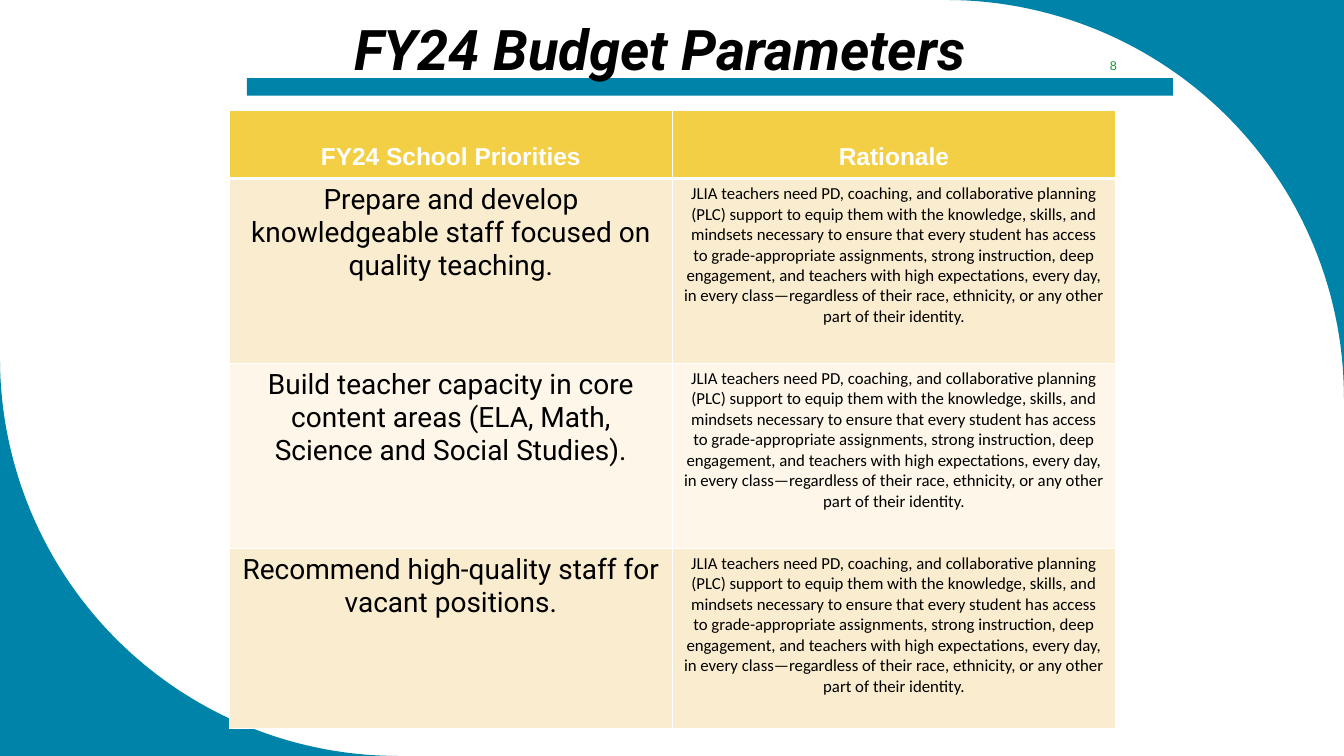
import math
import pptx
import pptx.util
import pptx.dml.color
import pptx.enum.shapes
import pptx.enum.text
import pptx.oxml
import pptx.oxml.ns

Cm = pptx.util.Cm
Pt = pptx.util.Pt
RGBColor = pptx.dml.color.RGBColor
CENTER = pptx.enum.text.PP_ALIGN.CENTER
ANCHOR = pptx.enum.text.MSO_ANCHOR

TEAL = RGBColor(0x00, 0x83, 0xA9)
GOLD = RGBColor(0xF3, 0xCF, 0x45)
SAND = RGBColor(0xFA, 0xED, 0xCF)
CREAM = RGBColor(0xFD, 0xF6, 0xE9)
GREEN = RGBColor(0x15, 0x98, 0x39)
BLACK = RGBColor(0x00, 0x00, 0x00)
WHITE = RGBColor(0xFF, 0xFF, 0xFF)

RATIONALE = (
    "JLIA teachers need PD, coaching, and collaborative planning (PLC) support "
    "to equip them with the knowledge, skills, and mindsets necessary to ensure "
    "that every student has access to grade-appropriate assignments, strong "
    "instruction, deep engagement, and teachers with high expectations, every day, "
    "in every class—regardless of their race, ethnicity, or any other part of their identity."
)
ROWS = [
    ("FY24 School Priorities", "Rationale"),
    ("Prepare and develop knowledgeable staff focused on quality teaching.", RATIONALE),
    ("Build teacher capacity in core content areas (ELA, Math, Science and Social Studies).", RATIONALE),
    ("Recommend high-quality staff for vacant positions.", RATIONALE),
]


def write(frame, text, font, size, color, bold=False, italic=False):
    frame.text = text
    para = frame.paragraphs[0]
    para.alignment = CENTER
    span = para.runs[0]
    span.font.name = font
    span.font.size = Pt(size)
    span.font.color.rgb = color
    span.font.bold = bold
    span.font.italic = italic


def set_borders(cell, widths):
    properties = cell._tc.get_or_add_tcPr()
    for index, (side, width) in enumerate(zip("LRTB", widths)):
        properties.insert(index, pptx.oxml.parse_xml(
            f'<a:ln{side} {pptx.oxml.ns.nsdecls("a")} w="{Pt(width)}">'
            f'<a:solidFill><a:srgbClr val="{WHITE}"/></a:solidFill></a:ln{side}>'))


deck = pptx.Presentation()
deck.slide_width = Cm(33.87)
deck.slide_height = Cm(19.05)
page = deck.slides.add_slide(deck.slide_layouts[5])

# Curved corners: the bottom left one is the top right one turned half round
radius = 10.03
steps = 60
for corner_x, corner_y, turn in ((33.87, 0, 1), (0, 19.05, -1)):
    center_x = corner_x - turn * radius
    center_y = corner_y + turn * radius
    angles = [math.pi / 2 * step / steps for step in range(steps + 1)]
    arc = [(Cm(center_x + turn * radius * math.sin(angle)),
            Cm(center_y - turn * radius * math.cos(angle))) for angle in angles]
    builder = page.shapes.build_freeform(Cm(corner_x), Cm(corner_y))
    builder.add_line_segments(arc, close=True)
    corner = builder.convert_to_shape()
    corner.shadow.inherit = False
    corner.fill.solid()
    corner.fill.fore_color.rgb = TEAL
    corner.line.fill.background()

# Bar under the title
bar = page.shapes.add_shape(pptx.enum.shapes.MSO_SHAPE.RECTANGLE,
                            Cm(6.22), Cm(1.97), Cm(23.34), Cm(0.44))
bar.shadow.inherit = False
bar.fill.solid()
bar.fill.fore_color.rgb = TEAL
bar.line.fill.background()

# Title, in front of the bar
title = page.shapes.title
title.left, title.top, title.width, title.height = Cm(7.75), Cm(0.23), Cm(17.75), Cm(1.96)
title.text_frame.auto_size = pptx.enum.text.MSO_AUTO_SIZE.NONE
title.text_frame.vertical_anchor = ANCHOR.TOP
write(title.text_frame, "FY24 Budget Parameters", "Roboto", 40, BLACK, bold=True, italic=True)
bar.element.addnext(title.element)

# Table of priorities
heights = (1.73, 4.66, 4.66, 4.54)
table = page.shapes.add_table(len(ROWS), 2, Cm(5.79), Cm(2.77), Cm(22.33), Cm(sum(heights))).table
table.columns[0].width = Cm(11.15)
table.columns[1].width = Cm(11.18)
fills = (GOLD, SAND, CREAM, SAND)
for row, texts in enumerate(ROWS):
    table.rows[row].height = Cm(heights[row])
    for column, text in enumerate(texts):
        cell = table.cell(row, column)
        cell.fill.solid()
        cell.fill.fore_color.rgb = fills[row]
        set_borders(cell, (1, 1, 3 if row == 1 else 1, 3 if row == 0 else 1))
        if row == 0:
            cell.margin_top = Cm(0.84)
            write(cell.text_frame, text, "Arial", 17.5, WHITE, bold=True)
        elif column == 0:
            write(cell.text_frame, text, "Roboto", 20, BLACK)
        else:
            write(cell.text_frame, text, "Calibri", 12, BLACK)

# Page number
number = page.shapes.add_textbox(Cm(27.03), Cm(1.27), Cm(2.06), Cm(0.76))
number.text_frame.word_wrap = True
number.text_frame.vertical_anchor = ANCHOR.MIDDLE
write(number.text_frame, "8", "Arial", 9, GREEN)

deck.save("out.pptx")
